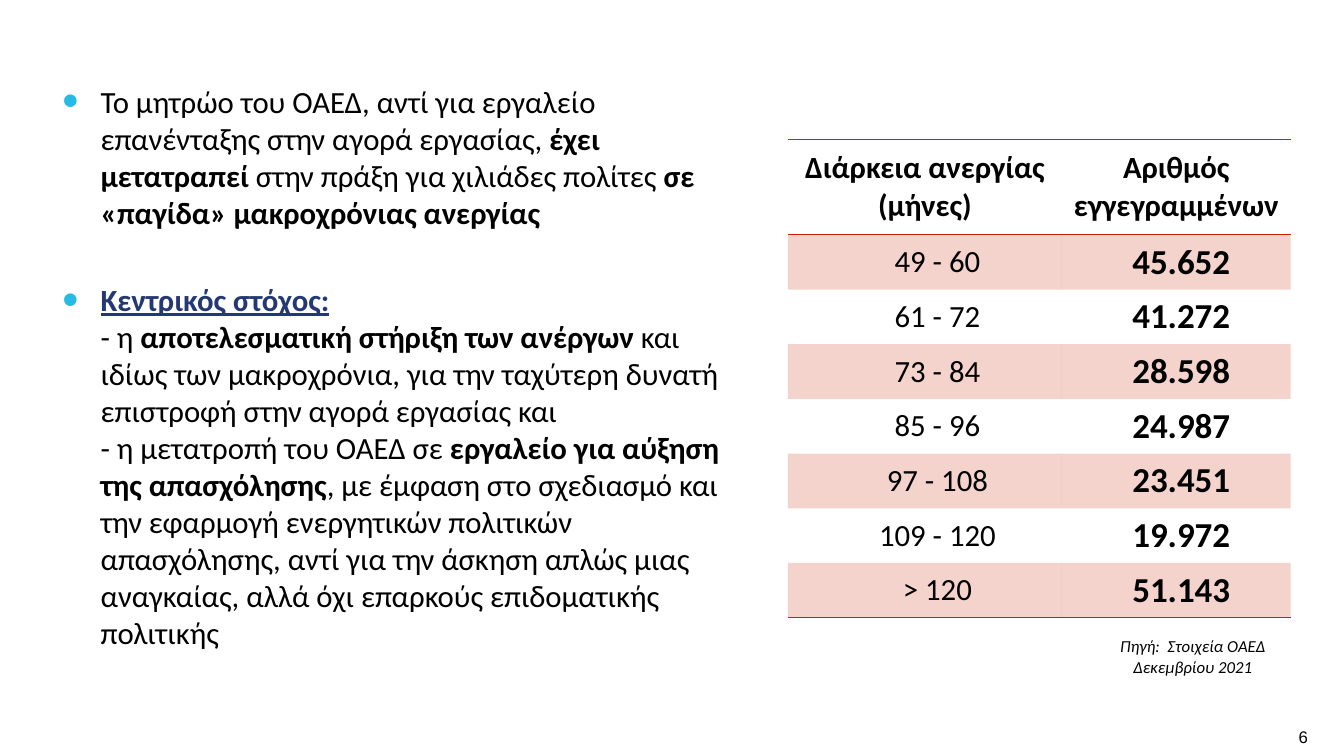
from lxml import etree
from pptx import Presentation
from pptx.dml.color import RGBColor
from pptx.enum.text import MSO_ANCHOR, PP_ALIGN
from pptx.oxml.ns import qn
from pptx.util import Inches, Pt

BLACK = RGBColor(0x00, 0x00, 0x00)
NAVY = RGBColor(0x24, 0x38, 0x73)
CYAN = RGBColor(0x26, 0xBB, 0xE3)
RED = RGBColor(0xC8, 0x25, 0x06)
CENTER = PP_ALIGN.CENTER
LEFT = PP_ALIGN.LEFT
TOP = MSO_ANCHOR.TOP
MIDDLE = MSO_ANCHOR.MIDDLE

PLAIN = {}
BOLD = {"bold": True}
HEADING = {"bold": True, "underline": True, "color": NAVY}
REGISTRY = [
    ("Το μητρώο του ΟΑΕΔ, αντί για εργαλείο επανένταξης στην αγορά εργασίας, ", PLAIN),
    ("έχει μετατραπεί ", BOLD),
    ("στην πράξη για χιλιάδες πολίτες ", PLAIN),
    ("σε «παγίδα» μακροχρόνιας ανεργίας", BOLD),
]
GOAL = [
    ("Κεντρικός στόχος:\n", HEADING),
    ("- η ", PLAIN),
    ("αποτελεσματική στήριξη των ανέργων ", BOLD),
    ("και ιδίως των μακροχρόνια, για την ταχύτερη δυνατή επιστροφή "
     "στην αγορά εργασίας και\n- η μετατροπή του ΟΑΕΔ σε ", PLAIN),
    ("εργαλείο για αύξηση της απασχόλησης", BOLD),
    (", με έμφαση στο σχεδιασμό και την εφαρμογή ενεργητικών πολιτικών "
     "απασχόλησης, αντί για την άσκηση απλώς μιας αναγκαίας, αλλά όχι "
     "επαρκούς επιδοματικής πολιτικής", PLAIN),
]
UNEMPLOYMENT = [
    ("Διάρκεια ανεργίας (μήνες)", "Αριθμός εγγεγραμμένων"),
    ("49 - 60", "45.652"),
    ("61 - 72", "41.272"),
    ("73 - 84", "28.598"),
    ("85 - 96", "24.987"),
    ("97 - 108", "23.451"),
    ("109 - 120", "19.972"),
    ("> 120", "51.143"),
]


class SlideBuilder:
    font = "Calibri"
    size = 22

    def __init__(self, page):
        self.page = page

    def span(self, para, text, size=None, font=None, color=BLACK,
             bold=False, italic=False, underline=False):
        for index, line in enumerate(text.split("\n")):
            if index:
                para.add_line_break()
            if line:
                run = para.add_run()
                run.text = line
                run.font.name = font or self.font
                run.font.size = Pt(size or self.size)
                run.font.color.rgb = color
                run.font.bold = bold
                run.font.italic = italic
                run.font.underline = underline

    def text_box(self, left, top, width, height, inset=None, anchor=TOP, wrap=True):
        box = self.page.shapes.add_textbox(
            Inches(left), Inches(top), Inches(width), Inches(height))
        frame = box.text_frame
        frame.word_wrap = wrap
        frame.vertical_anchor = anchor
        if inset is not None:
            frame.margin_left = frame.margin_right = Inches(inset)
            frame.margin_top = frame.margin_bottom = Inches(inset)
        return frame

    def caption(self, text, left, top, width, height, wrap=True, **style):
        frame = self.text_box(left, top, width, height, 0.06, MIDDLE, wrap)
        para = frame.paragraphs[0]
        para.alignment = CENTER
        self.span(para, text, size=12, **style)

    def bullets(self, items, left, top, width, height, gap):
        frame = self.text_box(left, top, width, height)
        for index, spans in enumerate(items):
            para = frame.add_paragraph() if index else frame.paragraphs[0]
            para.alignment = LEFT
            if index:
                para.space_before = Pt(gap)
            properties = para._p.get_or_add_pPr()
            properties.set("marL", str(Inches(0.38)))
            properties.set("indent", str(-Inches(0.38)))
            tint = etree.SubElement(properties, qn("a:buClr"))
            etree.SubElement(tint, qn("a:srgbClr"), val=str(CYAN))
            etree.SubElement(properties, qn("a:buSzPct"), val="150000")
            etree.SubElement(properties, qn("a:buFont"), typeface="Arial")
            etree.SubElement(properties, qn("a:buChar"), char="•")
            for text, style in spans:
                self.span(para, text, **style)

    def borders(self, cell, ruled_sides):
        properties = cell._tc.get_or_add_tcPr()
        for side in "LRTB":
            ruled = side in ruled_sides
            line = etree.SubElement(properties, qn("a:ln" + side), w=str(Pt(1)))
            fill = etree.SubElement(line, qn("a:solidFill" if ruled else "a:noFill"))
            if ruled:
                etree.SubElement(fill, qn("a:srgbClr"), val=str(RED))

    def shade(self, cell, shaded):
        if not shaded:
            cell.fill.background()
            return
        cell.fill.solid()
        cell.fill.fore_color.rgb = RED
        tint = cell._tc.tcPr.find(qn("a:solidFill")).find(qn("a:srgbClr"))
        etree.SubElement(tint, qn("a:alpha"), val="20000")

    def table(self, rows, left, top, widths, header_height, row_height):
        height = header_height + row_height * (len(rows) - 1)
        table = self.page.shapes.add_table(
            len(rows), len(widths), Inches(left), Inches(top),
            Inches(sum(widths)), Inches(height)).table
        table.horz_banding = False
        table.first_row = False
        for column, width in zip(table.columns, widths):
            column.width = Inches(width)
        for number, values in enumerate(rows):
            header = number == 0
            last = number == len(rows) - 1
            table.rows[number].height = Inches(header_height if header else row_height)
            sides = "TB" if header else "T" if number == 1 else "B" if last else ""
            for column, value in enumerate(values):
                cell = table.cell(number, column)
                cell.vertical_anchor = MIDDLE
                cell.margin_left = cell.margin_right = Inches(0.07)
                cell.margin_top = cell.margin_bottom = 0
                self.borders(cell, sides)
                self.shade(cell, number % 2 == 1)
                para = cell.text_frame.paragraphs[0]
                para.alignment = CENTER
                figure = column == 1 and not header
                if not header:
                    indent = Inches(0.1 if figure else 0.25)
                    para._p.get_or_add_pPr().set("indent", str(indent))
                self.span(para, value, size=25 if figure else 22, bold=header or figure)


def main():
    deck = Presentation()
    deck.slide_width = Inches(13.34)
    deck.slide_height = Inches(7.5)
    slide = SlideBuilder(deck.slides.add_slide(deck.slide_layouts[6]))
    slide.bullets([REGISTRY, GOAL], 0.52, 0.77, 6.79, 5.95, gap=36)
    slide.caption("6", 12.77, 7.15, 0.33, 0.31, wrap=False, font="Arial")
    slide.table(UNEMPLOYMENT, 7.82, 1.38, [2.72, 2.27], 0.95, 3.8 / 7)
    slide.caption("Πηγή:  Στοιχεία ΟΑΕΔ Δεκεμβρίου 2021",
                  10.86, 6.25, 1.96, 0.52, italic=True)
    deck.save("out.pptx")


if __name__ == "__main__":
    main()
